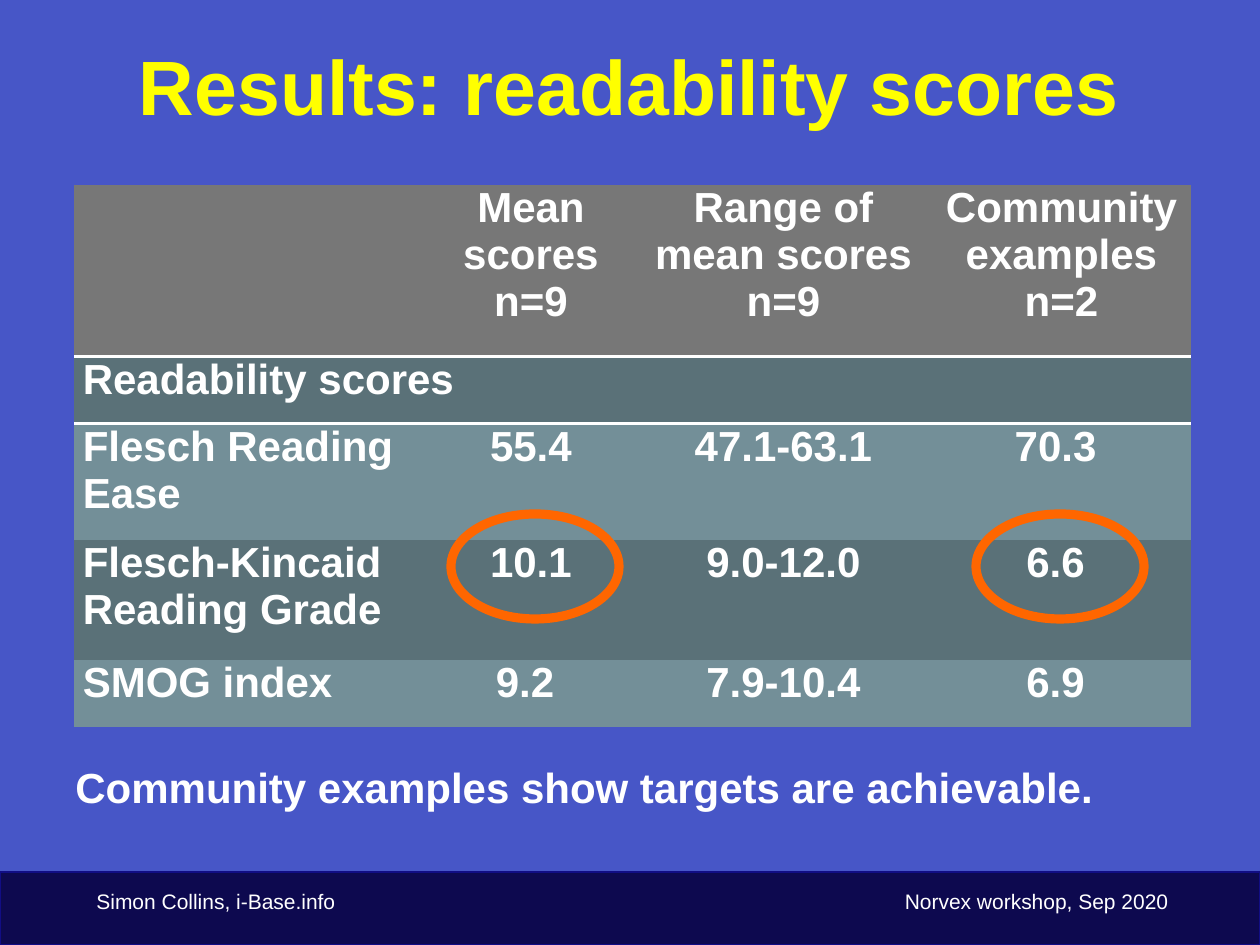
from lxml import etree
from pptx import Presentation
from pptx import util as u
from pptx.dml.color import RGBColor
from pptx.enum import shapes, text
from pptx.oxml import ns

PX = 914400 // 126
HUES = {
    "back": "4756C7", "foot": "0D094F", "edge": "110D84",
    "title": "FFFF00", "text": "FFFFFF", "ring": "FF6600",
    "head": "777777", "dark": "5A7178", "light": "738F98",
}
NO_STYLE = "{2D5ABB26-0587-4C30-8999-92F81FD0307C}"
LEFT, MID, RIGHT = text.PP_ALIGN.LEFT, text.PP_ALIGN.CENTER, text.PP_ALIGN.RIGHT
COLS = [353, 208, 297, 259]
ROWS = [
    (172, "head", ["", "Mean scores\nn=9", "Range of mean scores\nn=9",
                   "Community examples\nn=2"]),
    (67, "dark", ["Readability scores", "", "", ""]),
    (116, "light", ["Flesch Reading Ease", "55.4", "47.1-63.1", "70.3 "]),
    (120, "dark", ["Flesch-Kincaid Reading Grade", "10.1", "9.0-12.0", "6.6 "]),
    (67, "light", ["SMOG index", "9.2 ", "7.9-10.4", "6.9 "]),
]


def hue(name):
    return RGBColor.from_string(HUES[name])


def area(*nums):
    return [u.Emu(n * PX) for n in nums]


def write(frame, words, size=24, color="text", bold=True, align=LEFT):
    frame.word_wrap = True
    for i, line in enumerate(words.split("\n")):
        para = frame.add_paragraph() if i else frame.paragraphs[0]
        para.alignment = align
        font = para.font
        if line:
            run = para.add_run()
            run.text = line
            font = run.font
        font.name, font.size, font.bold = "Arial", u.Pt(size), bold
        font.color.rgb = hue(color)


def label(slide, box, words, anchor=text.MSO_ANCHOR.TOP, **form):
    frame = slide.shapes.add_textbox(*area(*box)).text_frame
    frame.vertical_anchor = anchor
    write(frame, words, **form)


def shape(slide, kind, box, fill, line, width):
    item = slide.shapes.add_shape(kind, *area(*box))
    item.shadow.inherit = False
    if fill:
        item.fill.solid()
        item.fill.fore_color.rgb = hue(fill)
    else:
        item.fill.background()
    item.line.color.rgb = hue(line)
    item.line.width = u.Pt(width)


def border(cell, side):
    edge = etree.Element(ns.qn("a:" + side), w=str(u.Pt(2)))
    fill = etree.SubElement(edge, ns.qn("a:solidFill"))
    etree.SubElement(fill, ns.qn("a:srgbClr"), val=HUES["text"])
    cell._tc.get_or_add_tcPr().insert(0, edge)


def table(slide, left, top):
    high = sum(row[0] for row in ROWS)
    box = area(left, top, sum(COLS), high)
    grid = slide.shapes.add_table(len(ROWS), len(COLS), *box).table
    grid._tbl.tblPr[0].text = NO_STYLE
    grid.first_row = grid.horz_banding = False
    for col, wide in zip(grid.columns, COLS):
        col.width = u.Emu(wide * PX)
    for r, (tall, fill, words) in enumerate(ROWS):
        grid.rows[r].height = u.Emu(tall * PX)
        for c, word in enumerate(words):
            cell = grid.cell(r, c)
            cell.margin_left = cell.margin_right = u.Inches(0.07)
            cell.margin_top = cell.margin_bottom = 0
            cell.fill.solid()
            cell.fill.fore_color.rgb = hue(fill)
            write(cell.text_frame, word, align=MID if c else LEFT)
            if r < 2:
                border(cell, "lnT" if r else "lnB")
    grid.cell(1, 0).merge(grid.cell(1, 2))


def main():
    deck = Presentation()
    deck.slide_width, deck.slide_height = area(1260, 945)
    slide = deck.slides.add_slide(deck.slide_layouts[6])
    slide.background.fill.solid()
    slide.background.fill.fore_color.rgb = hue("back")

    kinds = shapes.MSO_SHAPE
    shape(slide, kinds.RECTANGLE, (0, 872, 1260, 73), "foot", "edge", 1)
    label(slide, (84, 882, 500, 40), "Simon Collins, i-Base.info",
          size=12, bold=False)
    label(slide, (681, 882, 500, 40), "Norvex workshop, Sep 2020",
          size=12, bold=False, align=RIGHT)
    label(slide, (94, 6, 1071, 158), "Results: readability scores",
          anchor=text.MSO_ANCHOR.MIDDLE, size=44, color="title", align=MID)
    table(slide, 74, 185)
    label(slide, (63, 755, 1121, 64),
          "Community examples show targets are achievable.")
    for left in (451, 976):
        shape(slide, kinds.OVAL, (left, 514, 168, 105), None, "ring", 5.25)
    deck.save("out.pptx")


if __name__ == "__main__":
    main()
